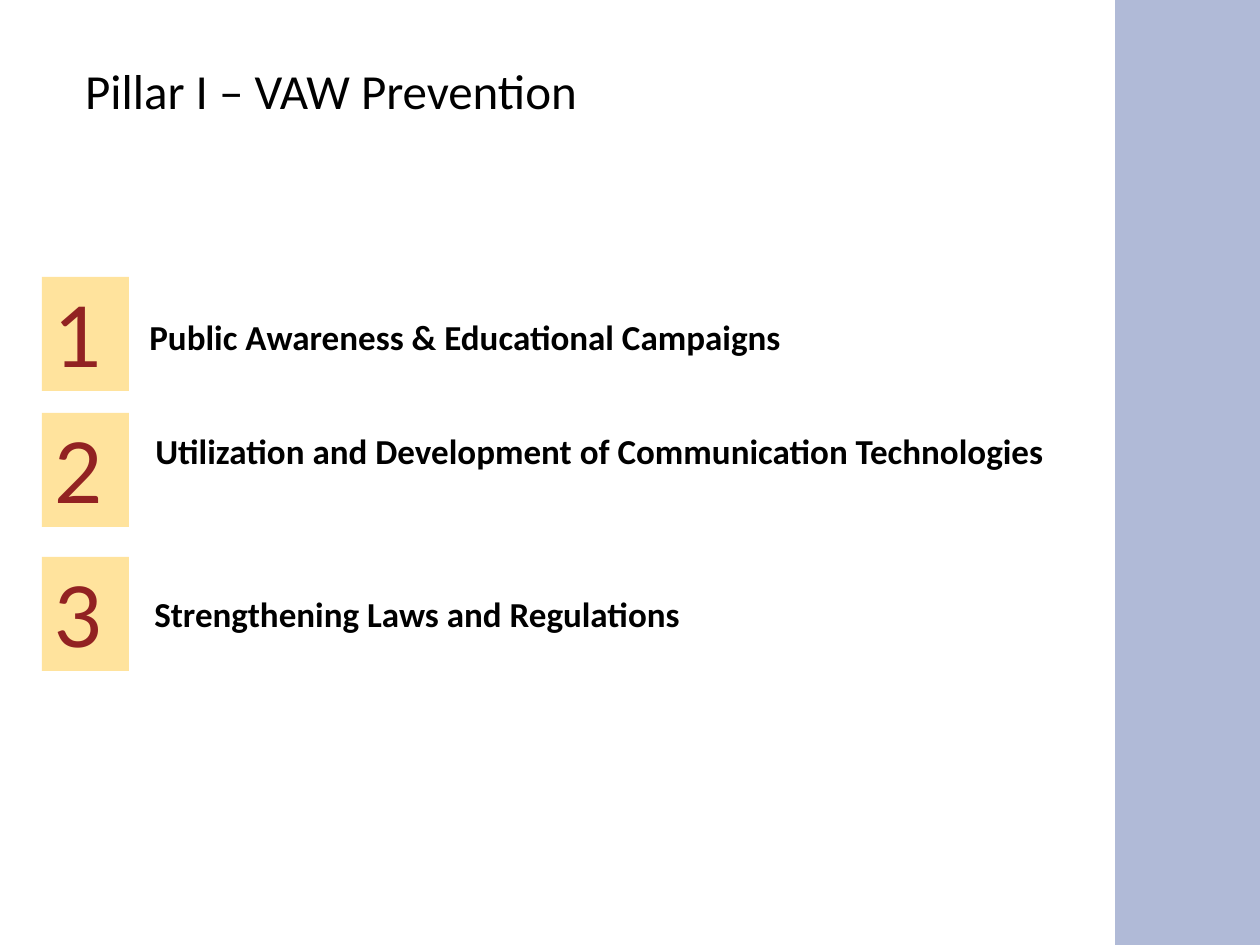
from pptx import Presentation
from pptx.dml.color import RGBColor
from pptx.enum.shapes import MSO_SHAPE
from pptx.enum.text import MSO_ANCHOR, MSO_AUTO_SIZE, PP_ALIGN
from pptx.util import Pt

PX = 914400 // 126
SLIDE_W, SLIDE_H = 1260, 945

TITLE = "Pillar I – VAW Prevention"
TITLE_BOX = (54, 55, 554, 69)
PANEL_BOX = (0, 0, 1115, SLIDE_H)
# number top, text left, text top, text height, text indent, text
ITEMS = [
    (277, 137, 309, 55, 0, "Public Awareness & Educational Campaigns"),
    (413, 132, 423, 97, 11, "Utilization and Development of Communication Technologies"),
    (557, 142, 586, 55, 0, "Strengthening Laws and Regulations"),
]
NUMBER_LEFT, NUMBER_W, NUMBER_H = 42, 87, 114
TEXT_W = 935

TITLE_FONT = dict(name="Calibri", size=Pt(28), bold=False)
NUMBER_FONT = dict(name="Lato", size=Pt(48), bold=False)
ITEM_FONT = dict(name="Calibri", size=Pt(20), bold=True)


def rgb(color):
    return RGBColor.from_string(color)


def emu(*lengths):
    return [n * PX for n in lengths]


def add_rect(s, box, color):
    sp = s.shapes.add_shape(MSO_SHAPE.RECTANGLE, *emu(*box))
    sp.shadow.inherit = False
    sp.fill.solid()
    sp.fill.fore_color.rgb = rgb(color)
    sp.line.fill.background()
    return sp


def write(sp, text, font, color, align, anchor=MSO_ANCHOR.TOP, wrap=True,
          auto_size=MSO_AUTO_SIZE.SHAPE_TO_FIT_TEXT):
    tf = sp.text_frame
    tf.word_wrap, tf.auto_size, tf.vertical_anchor = wrap, auto_size, anchor
    p = tf.paragraphs[0]
    p.alignment = align
    r = p.add_run()
    r.text = text
    for key, value in font.items():
        setattr(r.font, key, value)
    r.font.color.rgb = rgb(color)
    return p


prs = Presentation()
prs.slide_width, prs.slide_height = emu(SLIDE_W, SLIDE_H)
s = prs.slides.add_slide(prs.slide_layouts[5])
s.background.fill.solid()
s.background.fill.fore_color.rgb = rgb("B0BAD7")

panel = add_rect(s, PANEL_BOX, "FFFFFF")
s.shapes.title.element.addprevious(panel.element)

title = s.shapes.title
title.left, title.top, title.width, title.height = emu(*TITLE_BOX)
write(title, TITLE, TITLE_FONT, "000000", PP_ALIGN.CENTER,
      MSO_ANCHOR.MIDDLE, auto_size=MSO_AUTO_SIZE.NONE)

for number, (top, left, text_top, height, indent, text) in enumerate(ITEMS, 1):
    tile = add_rect(s, (NUMBER_LEFT, top, NUMBER_W, NUMBER_H), "FFE39D")
    write(tile, str(number), NUMBER_FONT, "922222", PP_ALIGN.LEFT, wrap=False)

    label = s.shapes.add_textbox(*emu(left, text_top, TEXT_W, height))
    p = write(label, text, ITEM_FONT, "000000", PP_ALIGN.JUSTIFY)
    if indent:
        p._p.get_or_add_pPr().set("marL", str(indent * PX))

prs.save("out.pptx")
